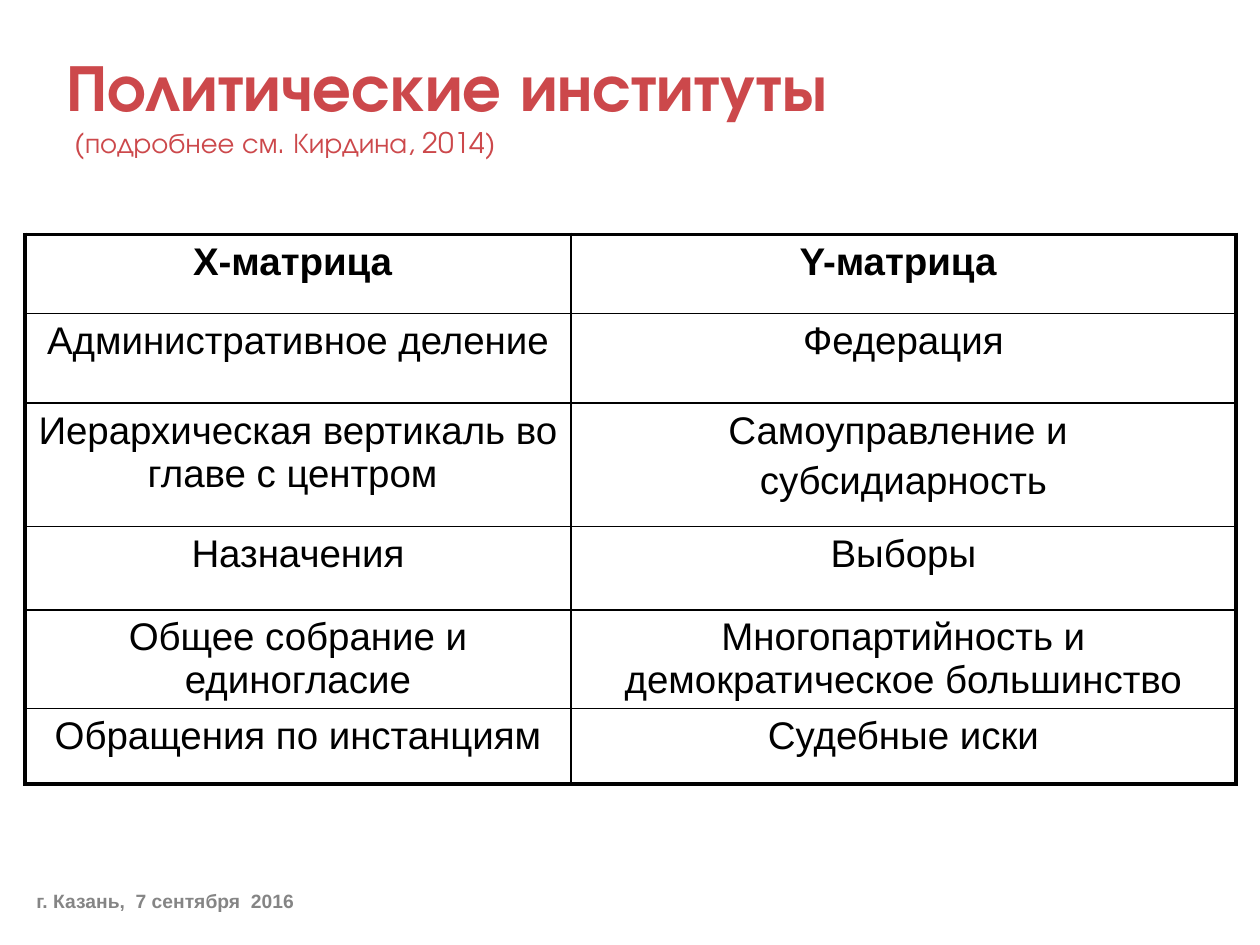
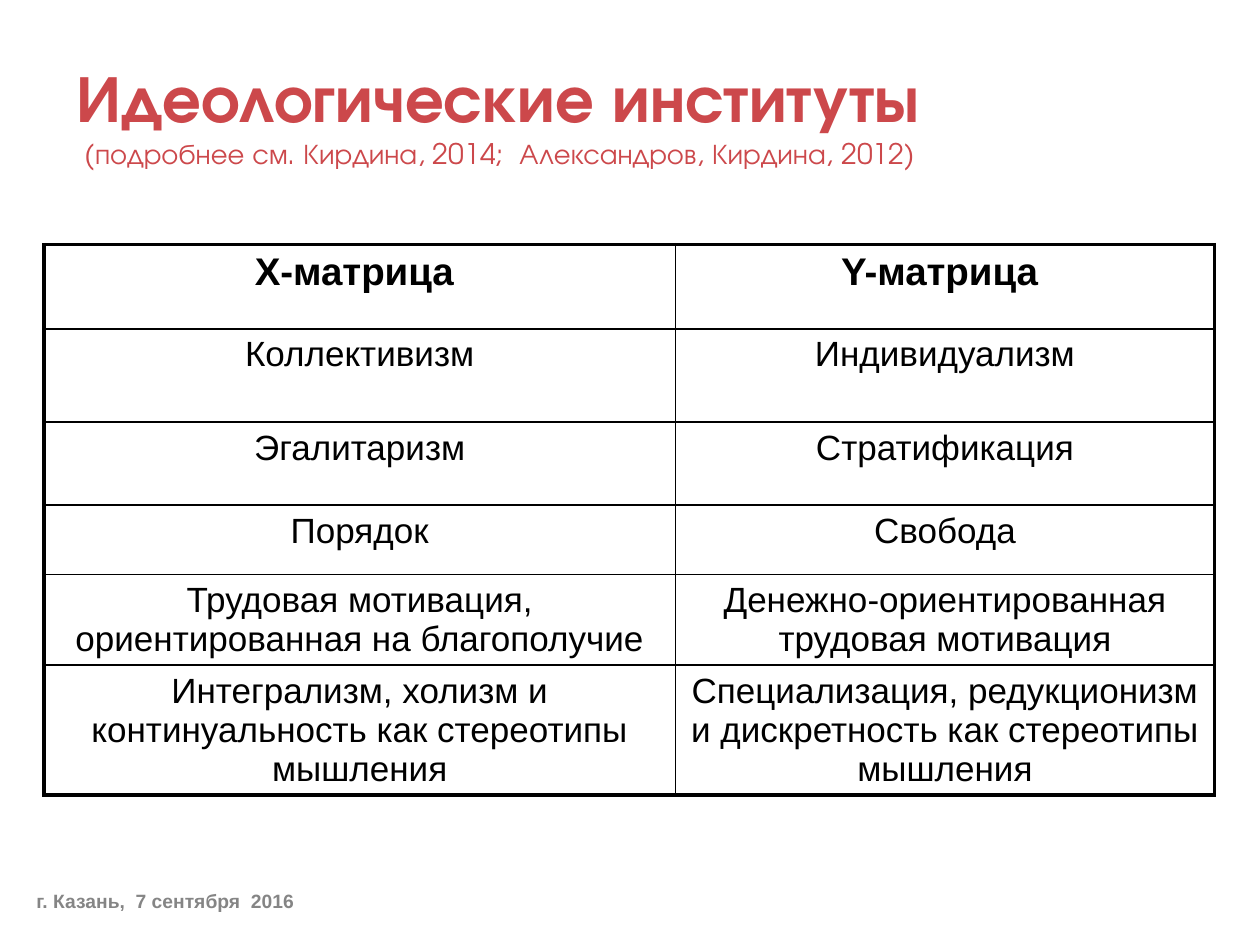
"""Builds two slides that compare X- and Y-matrix institutions in tables."""
import pptx
import pptx.util
import pptx.dml.color
import pptx.enum.text
import pptx.oxml.ns
from lxml import etree

RED = pptx.dml.color.RGBColor(0xCC, 0x48, 0x4B)
BLACK = pptx.dml.color.RGBColor(0, 0, 0)
GRAY = pptx.dml.color.RGBColor(0x85, 0x85, 0x85)
TITLE_FONT = "TeX Gyre Adventor"
BODY_FONT = "Arial"
THIN, THICK = 1, 2.25
HEADINGS = ("Х-матрица ", "Y-матрица ")
PLACE_AND_DATE = "г. Казань,  7 сентября  2016"

TOPICS = [
    {
        "heading": "Политические институты",
        "reference": " (подробнее см. Кирдина, 2014)",
        "heading_box": (4.3, 2.9, 91.7, 10.2),
        "corner": (2, 18.6),
        "columns": (43.3, 52.8),
        "rows": (6.3, 7.1, 9.8, 6.6, 7.8, 6),
        "size": 22,
        "pairs": [
            ("Административное деление", "Федерация"),
            ("Иерархическая вертикаль во главе с центром ", "Самоуправление и \nсубсидиарность"),
            ("Назначения", "Выборы"),
            ("Общее собрание и единогласие", "Многопартийность и демократическое большинство"),
            ("Обращения по инстанциям", "Судебные иски"),
        ],
    },
    {
        "heading": "Идеологические институты",
        "reference": " (подробнее см. Кирдина, 2014;  Александров, Кирдина, 2012)",
        "heading_box": (5.1, 4.4, 91.7, 9.6),
        "corner": (3.5, 19.4),
        "columns": (50.1, 42.8),
        "rows": (6.7, 7.4, 6.6, 5.5, 7.2, 10.3),
        "size": 20,
        "pairs": [
            ("Коллективизм", "Индивидуализм"),
            ("Эгалитаризм", "Стратификация"),
            ("Порядок", "Свобода"),
            ("Трудовая мотивация, ориентированная на благополучие",
             "Денежно-ориентированная трудовая мотивация"),
            ("Интегрализм, холизм и континуальность как стереотипы мышления",
             "Специализация, редукционизм и дискретность как стереотипы мышления"),
        ],
    },
]

deck = pptx.Presentation()
deck.slide_width = pptx.util.Inches(10)
deck.slide_height = pptx.util.Inches(7.5)
GRID_STEP = deck.slide_width // 100


def grid(*steps):
    """Turn grid steps, each a hundredth of the slide's width, into lengths."""
    return [pptx.util.Emu(round(step * GRID_STEP)) for step in steps]


def write(paragraph, text, size, color, font=BODY_FONT, bold=False, align=None):
    """Add formatted text to a paragraph."""
    run = paragraph.add_run()
    run.text = text
    run.font.name = font
    run.font.size = pptx.util.Pt(size)
    run.font.bold = bold
    run.font.color.rgb = color
    paragraph.alignment = align


for topic in TOPICS:
    slide = deck.slides.add_slide(deck.slide_layouts[5])

    heading = slide.shapes.title
    heading.left, heading.top, heading.width, heading.height = grid(*topic["heading_box"])
    heading.text_frame.auto_size = pptx.enum.text.MSO_AUTO_SIZE.NONE
    heading.text_frame.vertical_anchor = pptx.enum.text.MSO_ANCHOR.BOTTOM
    heading_line = heading.text_frame.paragraphs[0]
    left = pptx.enum.text.PP_ALIGN.LEFT
    write(heading_line, topic["heading"], 37.8, RED, font=TITLE_FONT, bold=True, align=left)
    heading_line.add_line_break()
    write(heading_line, topic["reference"], 16.2, RED, font=TITLE_FONT, align=left)

    pairs = [HEADINGS] + topic["pairs"]
    last_row = len(pairs) - 1
    extent = grid(*topic["corner"], sum(topic["columns"]), sum(topic["rows"]))
    matrices = slide.shapes.add_table(len(pairs), 2, *extent).table
    matrices.first_row = matrices.horz_banding = False
    for column, width in zip(matrices.columns, grid(*topic["columns"])):
        column.width = width
    for row, height in zip(matrices.rows, grid(*topic["rows"])):
        row.height = height

    for row_number, pair in enumerate(pairs):
        is_header = row_number == 0
        for column_number, institution in enumerate(pair):
            cell = matrices.cell(row_number, column_number)
            for line_number, line in enumerate(institution.split("\n")):
                frame = cell.text_frame
                paragraph = frame.add_paragraph() if line_number else frame.paragraphs[0]
                if line_number:
                    paragraph.space_before = pptx.util.Pt(4)
                write(paragraph, line, 22 if is_header else topic["size"], BLACK,
                      bold=is_header, align=pptx.enum.text.PP_ALIGN.CENTER)

            outer_edges = {"lnL": column_number == 0, "lnR": column_number == 1,
                           "lnT": is_header, "lnB": row_number == last_row}
            properties = cell._tc.get_or_add_tcPr()
            for edge, is_outer in outer_edges.items():
                border = etree.SubElement(properties, pptx.oxml.ns.qn("a:" + edge))
                border.set("w", str(pptx.util.Pt(THICK if is_outer else THIN)))
                paint = etree.SubElement(border, pptx.oxml.ns.qn("a:solidFill"))
                etree.SubElement(paint, pptx.oxml.ns.qn("a:srgbClr")).set("val", str(BLACK))
            cell.fill.background()

    footer = slide.shapes.add_textbox(*grid(1.9, 69.5, 65.7, 4)).text_frame
    footer.word_wrap = True
    footer.vertical_anchor = pptx.enum.text.MSO_ANCHOR.MIDDLE
    write(footer.paragraphs[0], PLACE_AND_DATE, 11, GRAY, bold=True)

deck.save("out.pptx")
